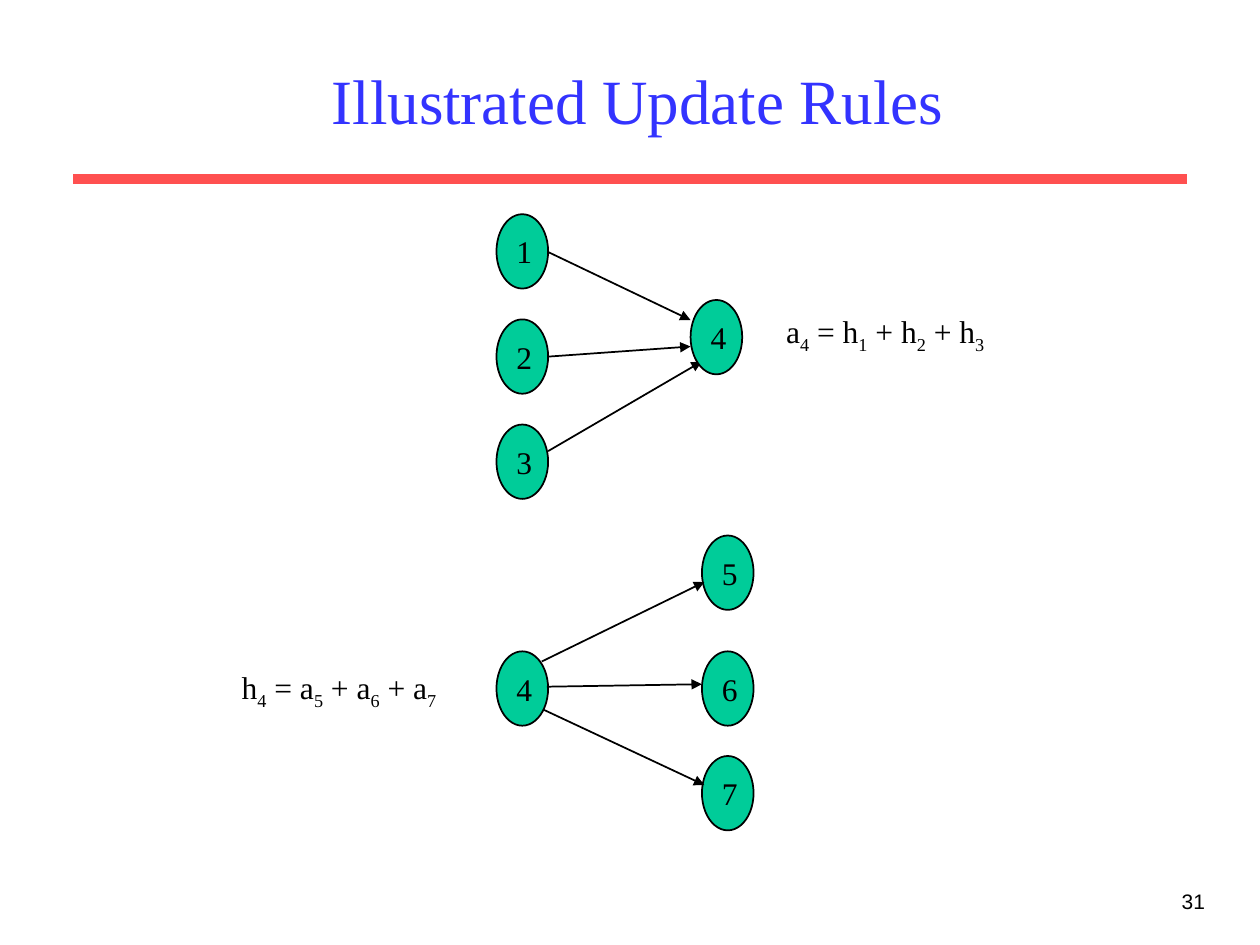
from dataclasses import dataclass

from lxml import etree
from pptx import Presentation
from pptx.dml.color import RGBColor
from pptx.enum.shapes import MSO_CONNECTOR, MSO_SHAPE
from pptx.enum.text import MSO_ANCHOR, PP_ALIGN
from pptx.oxml.ns import qn
from pptx.util import Pt

OVAL = MSO_SHAPE.OVAL
STRAIGHT = MSO_CONNECTOR.STRAIGHT
TOP, MIDDLE = MSO_ANCHOR.TOP, MSO_ANCHOR.MIDDLE
LEFT, CENTER, RIGHT = PP_ALIGN.LEFT, PP_ALIGN.CENTER, PP_ALIGN.RIGHT


@dataclass(frozen=True)
class Theme:
    ink: RGBColor = RGBColor(0x00, 0x00, 0x00)
    head: RGBColor = RGBColor(0x33, 0x33, 0xFF)
    rule: RGBColor = RGBColor(0xFF, 0x50, 0x50)
    node: RGBColor = RGBColor(0x00, 0xCC, 0x99)
    serif: str = "Times New Roman"
    sans: str = "Arial"
    title: int = 36
    body: int = 18
    small: int = 12


THEME = Theme()
NODE_W, NODE_H = 29.5, 42.5


def add_run(para, text, size=THEME.body, color=THEME.ink, font=THEME.serif):
    run = para.add_run()
    run.text = text
    run.font.size = Pt(size)
    run.font.name = font
    run.font.color.rgb = color
    return run


def set_frame(shape, align=LEFT, anchor=TOP, wrap=False):
    """Prepare the text frame and return its first paragraph."""
    frame = shape.text_frame
    frame.word_wrap = wrap
    frame.vertical_anchor = anchor
    para = frame.paragraphs[0]
    para.alignment = align
    return para


def add_box(slide, box, **style):
    return set_frame(slide.shapes.add_textbox(*map(Pt, box)), **style)


def add_line(slide, start, end, color, width, arrow=False):
    line = slide.shapes.add_connector(STRAIGHT, *map(Pt, (*start, *end)))
    line.line.color.rgb = color
    line.line.width = Pt(width)
    if arrow:
        tail = etree.SubElement(line.line._get_or_add_ln(), qn("a:tailEnd"))
        tail.set("type", "triangle")
    etree.SubElement(line._element.spPr, qn("a:effectLst"))


def add_node(slide, x, y, label):
    node = slide.shapes.add_shape(OVAL, *map(Pt, (x, y, NODE_W, NODE_H)))
    node.shadow.inherit = False
    node.fill.solid()
    node.fill.fore_color.rgb = THEME.node
    node.line.color.rgb = THEME.ink
    node.line.width = Pt(1)
    add_run(set_frame(node, anchor=MIDDLE), label)


def add_nodes(slide, box, nodes):
    for label, x, y in nodes:
        add_node(slide, box[0] + x, box[1] + y, label)


def add_arrows(slide, box, arrows):
    for x1, y1, x2, y2 in arrows:
        add_line(slide, (box[0] + x1, box[1] + y1),
                 (box[0] + x2, box[1] + y2), THEME.ink, 1, arrow=True)


def add_sum(slide, box, parts):
    """Write a formula whose parts alternate between base and subscript."""
    para = add_box(slide, box)
    for i, part in enumerate(parts):
        run = add_run(para, part)
        if i % 2:
            run.font._element.set("baseline", "-25000")


def draw_header(slide, box):
    x, y, w, h = box
    add_line(slide, (x, y + h), (x + w, y + h), THEME.rule, 6)
    para = add_box(slide, (x + 12.2, y, w - 24.4, 78),
                   align=CENTER, anchor=MIDDLE, wrap=True)
    add_run(para, " Illustrated Update Rules", THEME.title, THEME.head)


def draw_inward(slide, box):
    """Three nodes point to one: its authority is the sum of hubs."""
    # Arrows lie under the nodes
    add_arrows(slide, box, [(29.5, 21.6, 110.9, 60.5),
                            (29.5, 81.4, 110.9, 75.6),
                            (29.5, 135.4, 117.3, 84.2)])
    sources = [(label, 0, 60.1 * i) for i, label in enumerate("123")]
    add_nodes(slide, box, sources + [("4", 110.9, 49)])
    add_sum(slide, (box[0] + 158.4, box[1] + 52.6, 142.6, 31),
            ["a", "4", " = h", "1", " + h", "2", " + h", "3"])


def draw_outward(slide, box):
    """One node points to three: its hub is the sum of authorities."""
    add_nodes(slide, box, [("5", 117.4, 0), ("6", 117.4, 66.2),
                           ("7", 117.4, 126), ("4", 0, 66.2)])
    # Arrows lie over the nodes
    add_arrows(slide, box, [(25.9, 72, 118.8, 26.6),
                            (28.8, 86.4, 117.4, 85),
                            (26.6, 99.4, 118.8, 142.6)])
    add_sum(slide, (box[0] - 152.7, box[1] + 72, 140.4, 55.4),
            ["h", "4", " = a", "5", " + a", "6", " + a", "7"])


def draw_number(slide, box):
    add_run(add_box(slide, box, align=RIGHT, wrap=True), "31",
            THEME.small, font=THEME.sans)


def main():
    deck = Presentation()
    deck.slide_width, deck.slide_height = Pt(720), Pt(540)
    slide = deck.slides.add_slide(deck.slide_layouts[6])
    draw_header(slide, (41.8, 18, 636.4, 84.2))
    draw_inward(slide, (283.7, 122.4))
    draw_outward(slide, (283.7, 306))
    draw_number(slide, (545.8, 504, 149.8, 36))
    deck.save("out.pptx")


if __name__ == "__main__":
    main()
